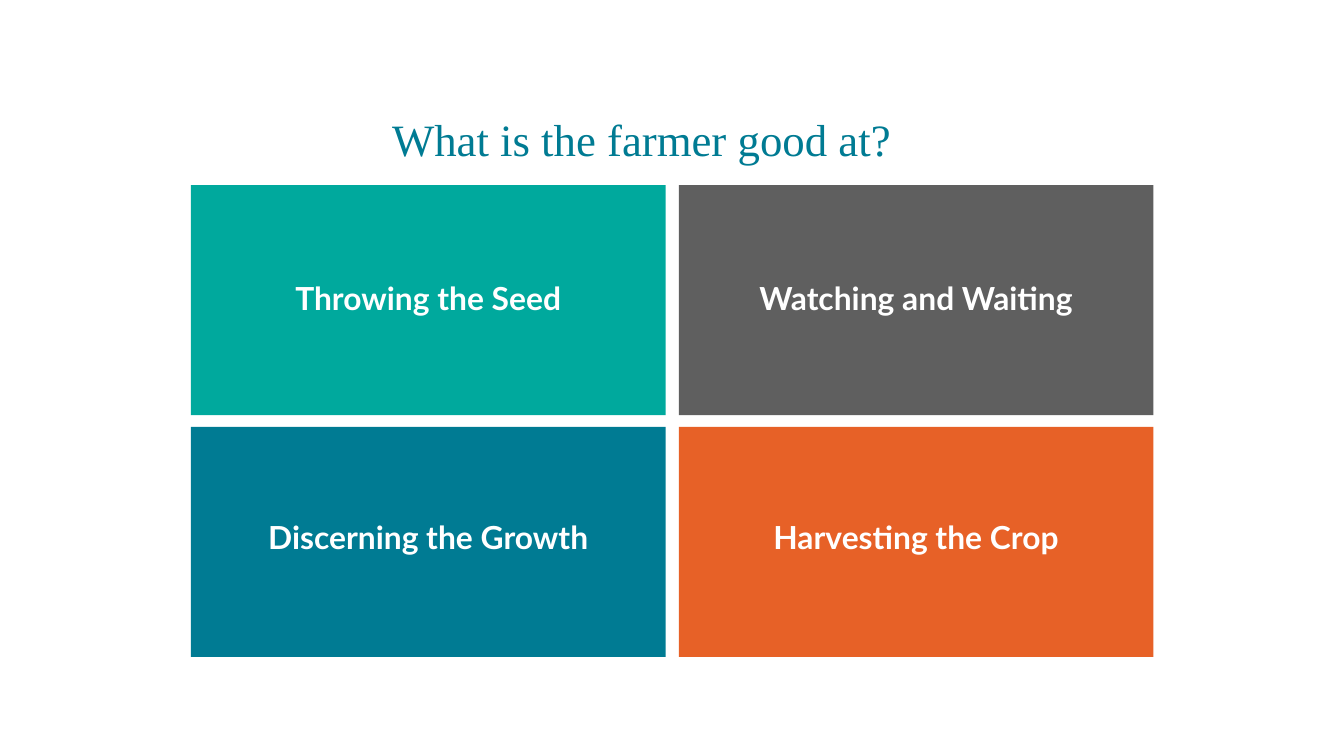
from lxml import etree
from pptx import Presentation
from pptx.dml.color import RGBColor
from pptx.enum.shapes import MSO_SHAPE as Shape
from pptx.enum.text import MSO_AUTO_SIZE as Fit, PP_ALIGN as Align
from pptx.oxml import parse_xml
from pptx.util import Cm, Pt

NS = "http://schemas.openxmlformats.org/drawingml/2006/main"
SHADE = f"""<a:effectLst xmlns:a="{NS}">
<a:outerShdw blurRad="38100" dist="50800" dir="2700000" algn="tl" rotWithShape="0">
<a:srgbClr val="000000"><a:alpha val="43000"/></a:srgbClr>
</a:outerShdw></a:effectLst>"""

TILES = [
    ("Throwing the Seed", "00A99D"),
    ("Watching and Waiting", "5F5F5F"),
    ("Discerning the Growth", "007B93"),
    ("Harvesting the Crop", "E76127"),
]
LEFT, TOP, WIDE, HIGH = 3.61, 3.5, 8.97, 4.35
COL, ROW = 9.22, 4.57
LABEL, STEP = 5.08, 4.52


def color(code):
    """Turn a hex string into a colour."""
    return RGBColor.from_string(code)


def add_text(slide, text, box, size, font, tint, bold=False,
             align=Align.LEFT, line=None, shade=False):
    """Add a text box with one formatted paragraph."""
    frame = slide.shapes.add_textbox(*map(Cm, box)).text_frame
    frame.word_wrap = True
    frame.auto_size = Fit.SHAPE_TO_FIT_TEXT
    para = frame.paragraphs[0]
    para.alignment = align
    if line:
        para.line_spacing = Pt(line)
    run = para.add_run()
    run.text = text
    run.font.size = Pt(size)
    run.font.name = font
    run.font.bold = bold
    run.font.color.rgb = color(tint)
    if shade:
        fill = run.font._element.find(etree.QName(NS, "solidFill"))
        fill.addnext(parse_xml(SHADE))


def add_tile(slide, text, fill, col, row):
    """Add a coloured tile and its label at a grid place."""
    left = LEFT + col * COL
    tile = slide.shapes.add_shape(
        Shape.RECTANGLE, *map(Cm, (left, TOP + row * ROW, WIDE, HIGH)))
    tile.shadow.inherit = False
    tile.fill.solid()
    tile.fill.fore_color.rgb = color(fill)
    tile.line.fill.background()
    add_text(slide, text, (left, LABEL + row * STEP, WIDE, 1.04), 17, "Lato",
             "FFFFFF", bold=True, align=Align.CENTER, line=22.4, shade=True)


def main():
    """Build the slide and save it."""
    deck = Presentation()
    deck.slide_width, deck.slide_height = Cm(25.4), Cm(14.29)
    slide = deck.slides.add_slide(deck.slide_layouts[6])
    add_text(slide, "What is the farmer good at?", (7.16, 1.98, 11.3, 1.27),
             24, "Times New Roman", "007B93")
    for i, (text, fill) in enumerate(TILES):
        row, col = divmod(i, 2)
        add_tile(slide, text, fill, col, row)
    deck.save("out.pptx")


if __name__ == "__main__":
    main()
